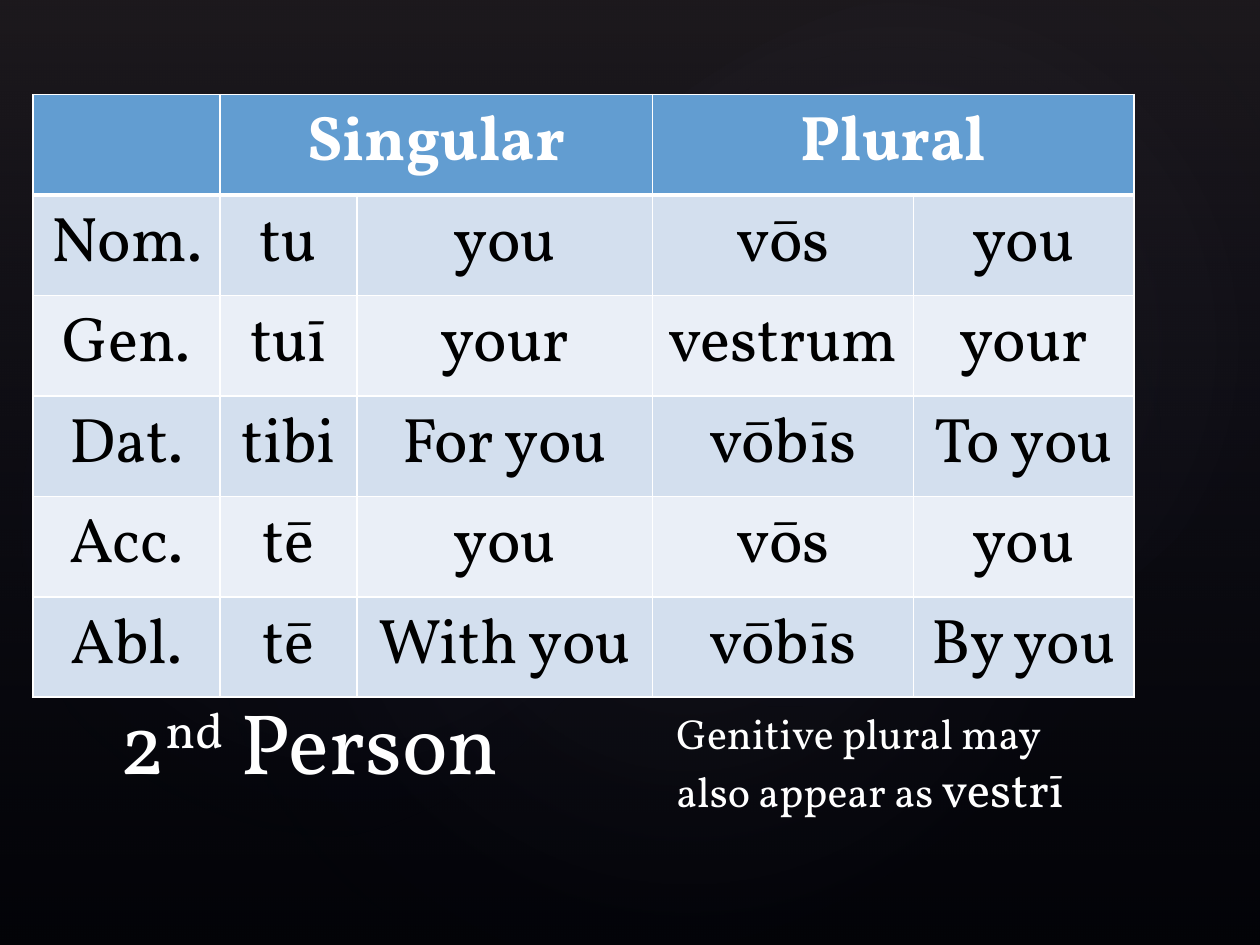
"""Build a slide with a table of second person Latin pronouns."""
import lxml.etree
import pptx
import pptx.dml.color
import pptx.enum.shapes
import pptx.enum.text
import pptx.oxml
import pptx.oxml.ns
import pptx.util

Pt = pptx.util.Pt
FONT = "Vollkorn"
NAMESPACE = pptx.oxml.ns.nsdecls("a")
CENTER = pptx.enum.text.PP_ALIGN.CENTER


def colour(value):
    return pptx.dml.color.RGBColor.from_string(value)


def style(font, size, value, bold=False):
    font.name, font.size, font.bold = FONT, Pt(size), bold
    font.color.rgb = colour(value)


deck = pptx.Presentation()
deck.slide_width, deck.slide_height = Pt(720), Pt(540)
slide = deck.slides.add_slide(deck.slide_layouts[5])
slide.background.fill.solid()
slide.background.fill.fore_color.rgb = colour("000000")

oval = pptx.enum.shapes.MSO_SHAPE.OVAL
rectangle = pptx.enum.shapes.MSO_SHAPE.RECTANGLE
linear = '<a:lin ang="5400000" scaled="0"/>'
radial = '<a:path path="circle"><a:fillToRect l="50000" t="50000" r="50000" b="50000"/></a:path>'
shade = [(0, "504652", 36), (100, "242852", 10)]
faint_glow = [(0, "C4BCC6", 7), (58, "242852", 0)]
glow = [(0, "C4BCC6", 8), (58, "242852", 0)]
backdrop = [
    (rectangle, (0, 0, 720, 540), 0, shade, linear),
    (oval, (108, 82, 570, 449), 328.7, faint_glow, radial),
    (oval, (-21.6, 92, 436, 353), 294.3, glow, radial),
    (oval, (258, 9.4, 510, 374), 328.7, glow, radial),
]
for kind, place, rotation, stops, direction in backdrop:
    light = slide.shapes.add_shape(kind, *map(Pt, place))
    light.rotation = rotation
    light.shadow.inherit = False
    light.line.fill.background()
    stop_xml = "".join(
        f'<a:gs pos="{position * 1000}"><a:srgbClr val="{value}">'
        f'<a:alpha val="{alpha * 1000}"/></a:srgbClr></a:gs>'
        for position, value, alpha in stops
    )
    gradient = pptx.oxml.parse_xml(
        f'<a:gradFill {NAMESPACE} rotWithShape="1"><a:gsLst>{stop_xml}</a:gsLst>{direction}</a:gradFill>'
    )
    light.element.spPr.find(pptx.oxml.ns.qn("a:prstGeom")).addnext(gradient)

rows = [
    ["", "Singular", "", "Plural", ""],
    ["Nom.", "tu", "you", "vōs", "you"],
    ["Gen.", "tuī", "your", "vestrum", "your"],
    ["Dat.", "tibi", "For you", "vōbīs", "To you"],
    ["Acc.", "tē", "you", "vōs", "you"],
    ["Abl.", "tē", "With you", "vōbīs", "By you"],
]
column_widths = [106.7, 78.3, 169, 149, 126]
row_height = 57.4
frame = slide.shapes.add_table(
    len(rows), len(column_widths), Pt(19), Pt(54), Pt(sum(column_widths)), Pt(row_height * len(rows))
)
table = frame.table
for column, width in zip(table.columns, column_widths):
    column.width = Pt(width)
for row_index, words in enumerate(rows):
    table.rows[row_index].height = Pt(row_height)
    header = row_index == 0
    fill = "629DD1" if header else ("EAEFF7", "D3DFEE")[row_index % 2]
    border_widths = {"L": 1, "R": 1, "T": 3 if row_index == 1 else 1, "B": 3 if header else 1}
    for column_index, word in enumerate(words):
        cell = table.cell(row_index, column_index)
        properties = cell._tc.get_or_add_tcPr()
        for side, width in border_widths.items():
            properties.append(pptx.oxml.parse_xml(
                f'<a:ln{side} {NAMESPACE} w="{Pt(width)}"><a:solidFill>'
                f'<a:srgbClr val="FFFFFF"/></a:solidFill></a:ln{side}>'
            ))
        cell.fill.solid()
        cell.fill.fore_color.rgb = colour(fill)
        para = cell.text_frame.paragraphs[0]
        para.text = word
        para.alignment = CENTER
        style(para.font, 36, "FFFFFF" if header else "000000", header)
for first in (1, 3):
    table.cell(0, first).merge(table.cell(0, first + 1))

title = slide.shapes.title
title.left, title.top, title.width, title.height = Pt(61.2), Pt(383.8), Pt(594), Pt(72)
title.text_frame.auto_size = pptx.enum.text.MSO_AUTO_SIZE.NONE
title.text_frame.vertical_anchor = pptx.enum.text.MSO_ANCHOR.BOTTOM
para = title.text_frame.paragraphs[0]
para.alignment = pptx.enum.text.PP_ALIGN.LEFT
style(para.font, 49, "FFFFFF")
for word, baseline in (("2", 0), ("nd", 30000), (" Person", 0)):
    span = para.add_run()
    span.text = word
    span._r.get_or_add_rPr().set("baseline", str(baseline))
slide.shapes._spTree.append(title.element)

note = slide.shapes.add_textbox(Pt(379.4), Pt(401), Pt(243.4), Pt(70.6))
note.text_frame.word_wrap = True
para = note.text_frame.paragraphs[0]
style(para.font, 24, "FFFFFF")
for word, size in (("Genitive plural may also appear as ", 24), ("vestrī", 28)):
    span = para.add_run()
    span.text = word
    span.font.size = Pt(size)

deck.save("out.pptx")
